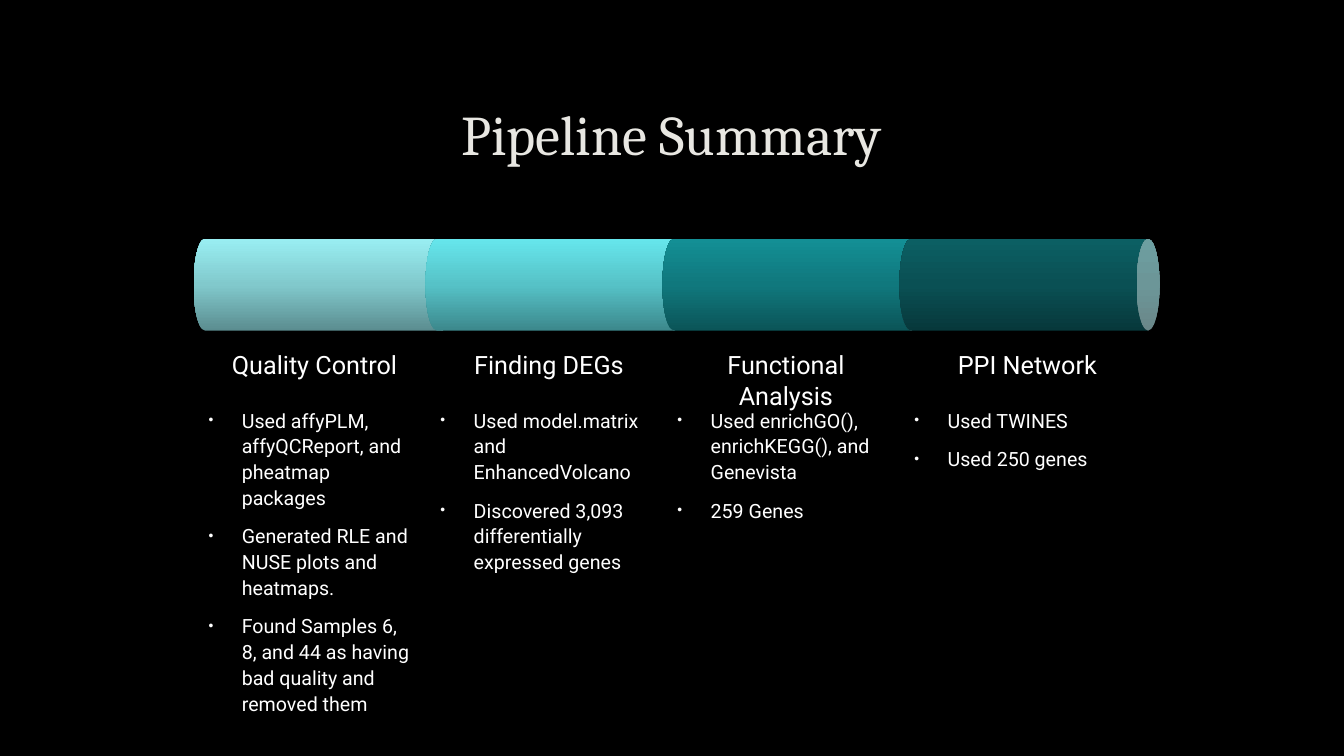
import copy
from dataclasses import dataclass

import lxml.etree
import pptx
import pptx.dml.color
import pptx.enum.dml
import pptx.enum.shapes
import pptx.enum.text
import pptx.oxml.ns
import pptx.util

Inches = pptx.util.Inches
Pt = pptx.util.Pt
qn = pptx.oxml.ns.qn
ALIGN = pptx.enum.text.PP_ALIGN
ANCHOR = pptx.enum.text.MSO_ANCHOR


@dataclass(frozen=True)
class Theme:
    background: str = "000000"
    title_color: str = "E8E7E2"
    text_color: str = "FFFFFF"
    title_font: str = "Cambria"
    text_font: str = "Roboto"
    title_size: int = 40
    heading_size: int = 18
    body_size: int = 14
    # Dark, middle and light tone of each pipe segment
    pipe_tones: tuple = (
        ("5B8D90", "81C9CC", "99EEF2"),
        ("3C888C", "56C2C7", "66E6EC"),
        ("0B5558", "10787D", "138F95"),
        ("07383B", "0A5054", "0C5F63"),
    )


THEME = Theme()

# Vertical bands (top, height) and column edges, in inches
TITLE_BOX = (1, 0.67, 11.32, 1.38)
PIPE_BAND = (2.37, 0.91)
HEADING_BAND = (3.42, 0.4)
BODY_BAND = (3.98, 2.94)
COLUMN_EDGES = (1.92, 4.22, 6.57, 8.92, 11.36)
SEGMENT_LENGTH = 2.58
HEADING_INDENT = 0.1

STAGES = (
    ("Quality Control", (
        "Used affyPLM, affyQCReport, and pheatmap packages",
        "Generated RLE and NUSE plots and heatmaps.",
        "Found Samples 6, 8, and 44 as having bad quality and removed them")),
    ("Finding DEGs", (
        "Used model.matrix and EnhancedVolcano",
        "Discovered 3,093 differentially expressed genes")),
    ("Functional Analysis", (
        "Used enrichGO(), enrichKEGG(), and Genevista",
        "259 Genes")),
    ("PPI Network", (
        "Used TWINES",
        "Used 250 genes")),
)


def rgb(value):
    return pptx.dml.color.RGBColor.from_string(value)


def add_bullet(paragraph):
    properties = paragraph._p.get_or_add_pPr()
    properties.set("marL", str(Inches(0.38)))
    properties.set("indent", str(Inches(-0.33)))
    color = lxml.etree.SubElement(properties, qn("a:buClr"))
    lxml.etree.SubElement(color, qn("a:srgbClr"), val=THEME.text_color)
    lxml.etree.SubElement(properties, qn("a:buSzPct"), val="70000")
    lxml.etree.SubElement(properties, qn("a:buFont"), typeface="Arial")
    lxml.etree.SubElement(properties, qn("a:buChar"), char="•")


def add_text(slide, box, lines, *, size, font=THEME.text_font,
             color=THEME.text_color, align=ALIGN.LEFT, anchor=ANCHOR.TOP,
             line_spacing=1.0, before=0, after=0, bullets=False):
    frame = slide.shapes.add_textbox(*map(Inches, box)).text_frame
    frame.word_wrap = True
    frame.vertical_anchor = anchor
    for index, line in enumerate(lines):
        paragraph = frame.add_paragraph() if index else frame.paragraphs[0]
        paragraph.alignment = align
        paragraph.line_spacing = line_spacing
        paragraph.space_before = Pt(before)
        paragraph.space_after = Pt(after)
        if bullets:
            add_bullet(paragraph)
        run = paragraph.add_run()
        run.text = line
        run.font.name = font
        run.font.size = Pt(size)
        run.font.color.rgb = rgb(color)


def add_title(slide, box, text):
    add_text(slide, box, [text], size=THEME.title_size, font=THEME.title_font,
             color=THEME.title_color, align=ALIGN.CENTER,
             anchor=ANCHOR.MIDDLE, line_spacing=0.9)


def add_pipe_segment(slide, box, tones):
    left, top, length, thickness = box
    # The upright can is turned about its centre, so its sides swap
    shift = (length - thickness) / 2
    can = slide.shapes.add_shape(
        pptx.enum.shapes.MSO_SHAPE.CAN,
        Inches(left + shift), Inches(top - shift),
        Inches(thickness), Inches(length))
    can.rotation = 90
    can.shadow.inherit = False
    can.line.fill.background()

    # Three-stop gradient, light along the upper side
    can.fill.gradient()
    can.fill.gradient_angle = 180
    stop_list = can._element.spPr.find(".//" + qn("a:gsLst"))
    stop_list.insert(1, copy.deepcopy(stop_list[0]))
    for index, (stop, tone) in enumerate(zip(can.fill.gradient_stops, tones)):
        stop.position = index / 2
        stop.color.rgb = rgb(tone)


def add_stage(slide, left, right, stage, tones):
    heading, points = stage
    width = right - left
    add_pipe_segment(slide, (left, PIPE_BAND[0], SEGMENT_LENGTH, PIPE_BAND[1]),
                     tones)
    add_text(slide, (left + HEADING_INDENT, HEADING_BAND[0],
                     width - HEADING_INDENT, HEADING_BAND[1]),
             [heading], size=THEME.heading_size, align=ALIGN.CENTER)
    add_text(slide, (left, BODY_BAND[0], width, BODY_BAND[1]), points,
             size=THEME.body_size, line_spacing=1.1,
             before=0.2 * THEME.body_size, after=6, bullets=True)


def main():
    presentation = pptx.Presentation()
    presentation.slide_width = Inches(13.33)
    presentation.slide_height = Inches(7.5)
    slide = presentation.slides.add_slide(presentation.slide_layouts[6])
    slide.background.fill.solid()
    slide.background.fill.fore_color.rgb = rgb(THEME.background)

    add_title(slide, TITLE_BOX, "Pipeline Summary")
    # Each later segment covers the end cap of the one before
    for left, right, stage, tones in zip(
            COLUMN_EDGES, COLUMN_EDGES[1:], STAGES, THEME.pipe_tones):
        add_stage(slide, left, right, stage, tones)

    presentation.save("out.pptx")


if __name__ == "__main__":
    main()
